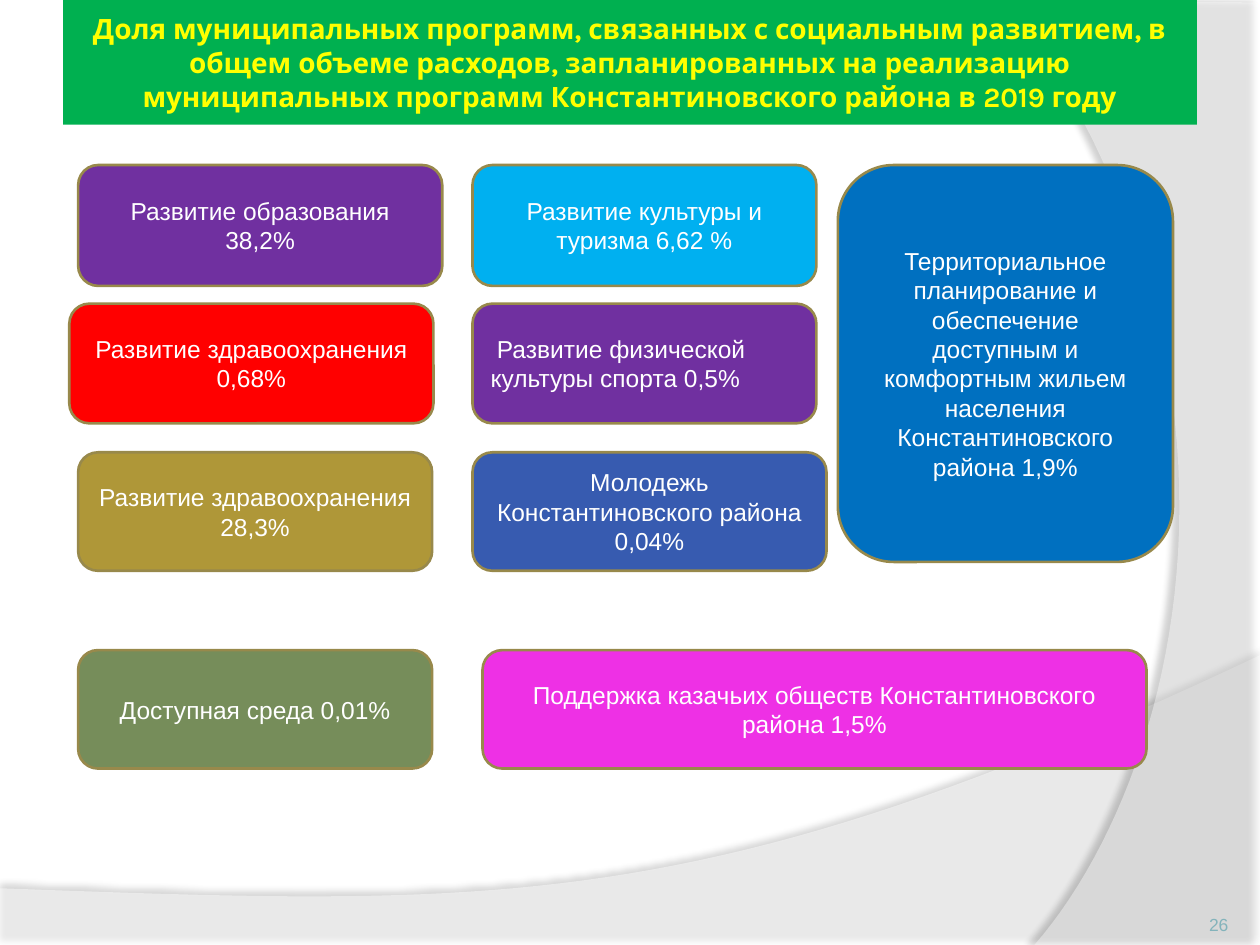
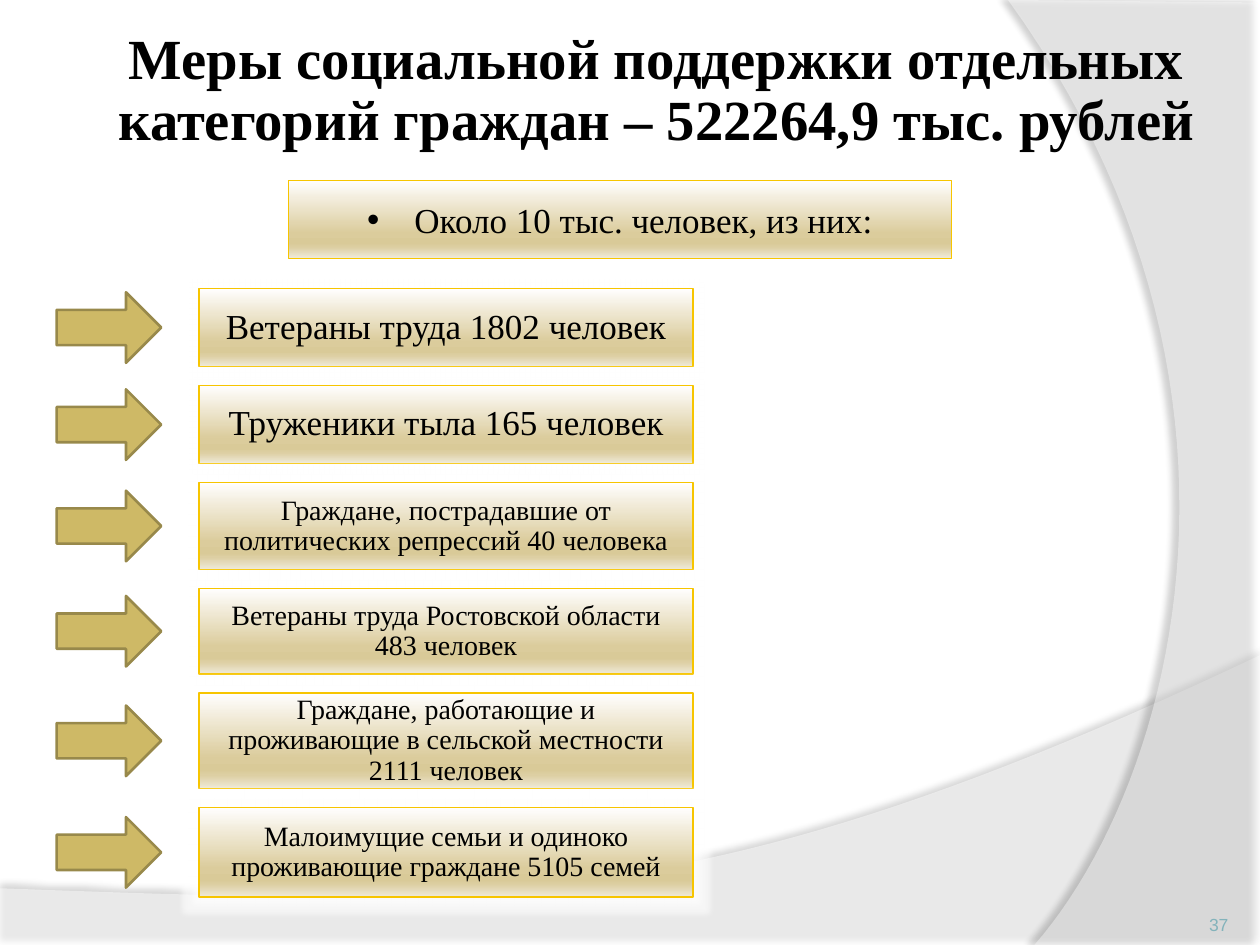
from dataclasses import dataclass

from lxml import etree
from pptx import Presentation
from pptx.dml.color import RGBColor
from pptx.enum.shapes import MSO_SHAPE
from pptx.enum.text import MSO_ANCHOR, MSO_AUTO_SIZE, PP_ALIGN
from pptx.oxml.ns import qn
from pptx.util import Emu, Inches, Pt

ROUNDED = MSO_SHAPE.ROUNDED_RECTANGLE
RECTANGLE = MSO_SHAPE.RECTANGLE
ARROW = MSO_SHAPE.RIGHT_ARROW
MIDDLE, BOTTOM = MSO_ANCHOR.MIDDLE, MSO_ANCHOR.BOTTOM
LEFT, CENTER, RIGHT = PP_ALIGN.LEFT, PP_ALIGN.CENTER, PP_ALIGN.RIGHT
NO_FIT = MSO_AUTO_SIZE.NONE
TITLE_AND_BODY, TITLE_ONLY = 1, 5

COLORS = {
    "white": "FFFFFF",
    "black": "000000",
    "yellow": "FFFF00",
    "title_band": "00B050",
    "outline": "98894B",
    "gold": "CEB966",
    "gold_line": "F7C500",
    "page": "83B3BB",
    "purple": "7030A0",
    "red": "FF0000",
    "ochre": "AF9738",
    "sky": "00B0F0",
    "blue": "0070C0",
    "indigo": "375BB0",
    "magenta": "EE30E5",
    "olive": "768D5A",
}
GOLD_GRADIENT = {0: "FFFEFE", 68: "DBCC9C", 81: "D9CA98", 86: "DDCFA3", 100: "EFEAD9"}
SERIF = "Times New Roman"


@dataclass(frozen=True)
class Ribbon:
    outline: tuple
    curve: tuple
    opacity: int
    shadow_opacity: int
    shadow_distance: float
    shadow_angle: int


@dataclass(frozen=True)
class Program:
    text: str
    color: str
    left: float
    top: float
    width: float
    height: float
    align: PP_ALIGN = CENTER


@dataclass(frozen=True)
class Group:
    text: str
    height: float
    size: int


RIBBONS = (
    Ribbon(((0, 7.05), (0, 7.51), (10, 7.51), (10, 5.2)),
           ((10, 5.2), (5.59, 7.29), (3.91, 7.19), (0, 7.05)), 45, 35, 3.5, 270),
    Ribbon(((10, 0.02), (10, 7.5), (8.21, 7.5)),
           ((8.21, 7.5), (9.35, 6.19), (10.18, 3), (8, 0)), 40, 45, 4, 180),
)

PROGRAMS = (
    Program("Развитие образования 38,2%", "purple", 0.62, 1.31, 2.89, 0.96),
    Program("Развитие здравоохранения 0,68%", "red", 0.55, 2.41, 2.89, 0.95),
    Program("Развитие здравоохранения 28,3%", "ochre", 0.62, 3.59, 2.81, 0.94),
    Program("Развитие культуры и туризма 6,62 %", "sky", 3.75, 1.31, 2.73, 0.96),
    Program("Территориальное планирование и обеспечение доступным и комфортным "
            "жильем населения Константиновского района 1,9%",
            "blue", 6.65, 1.31, 2.66, 3.15),
    Program("Развитие физической культуры спорта 0,5%",
            "purple", 3.75, 2.41, 2.73, 0.95, LEFT),
    Program("Молодежь Константиновского района 0,04%", "indigo", 3.75, 3.59, 2.81, 0.94),
    Program("Поддержка казачьих обществ Константиновского района 1,5%",
            "magenta", 3.83, 5.16, 5.27, 0.94),
    Program("Доступная среда 0,01%", "olive", 0.62, 5.16, 2.81, 0.94),
)

GROUPS = (
    Group("Ветераны труда 1802 человек", 0.62, 20),
    Group("Труженики тыла 165 человек", 0.62, 20),
    Group("Граждане, пострадавшие от политических репрессий 40 человека", 0.69, 16),
    Group("Ветераны труда Ростовской области 483 человек", 0.68, 16),
    Group("Граждане, работающие и проживающие в сельской местности 2111 человек", 0.76, 16),
    Group("Малоимущие семьи и одиноко проживающие граждане 5105 семей", 0.71, 16),
)
GROUPS_TOP, GROUPS_GAP = 2.29, 0.15
ARROW_WIDTH, ARROW_HEIGHT = 0.83, 0.56


def rgb(name: str) -> RGBColor:
    return RGBColor.from_string(COLORS[name])


def place(shape, left: float, top: float, width: float, height: float) -> None:
    shape.left, shape.top = Inches(left), Inches(top)
    shape.width, shape.height = Inches(width), Inches(height)


def paint(shape, fill: str, line: str = "outline", width: float = 1.5) -> None:
    shape.shadow.inherit = False
    shape.fill.solid()
    shape.fill.fore_color.rgb = rgb(fill)
    shape.line.color.rgb = rgb(line)
    shape.line.width = Pt(width)


def write(shape, text: str, font: str, size: float, color: str, align=CENTER,
          anchor=MIDDLE, bold: bool = False, spacing: float = 1.0):
    frame = shape.text_frame
    frame.text = text
    frame.word_wrap = True
    frame.auto_size = NO_FIT
    frame.vertical_anchor = anchor
    paragraph = frame.paragraphs[0]
    paragraph.alignment = align
    paragraph.line_spacing = spacing
    paragraph.space_before = Pt(0)
    paragraph.font.name = font
    paragraph.font.size = Pt(size)
    paragraph.font.bold = bold
    paragraph.font.color.rgb = rgb(color)
    return paragraph


def set_insets(shape, inset: float) -> None:
    frame = shape.text_frame
    frame.margin_left = frame.margin_right = Inches(inset)
    frame.margin_top = frame.margin_bottom = Inches(inset)


def add_effect(shape, tag: str, color: str, opacity: int, **settings) -> None:
    shape.shadow.inherit = False
    effects = shape.element.spPr.find(qn("a:effectLst"))
    effect = etree.SubElement(effects, qn(tag), {k: str(v) for k, v in settings.items()})
    tint = etree.SubElement(effect, qn("a:srgbClr"), val=COLORS[color])
    etree.SubElement(tint, qn("a:alpha"), val=str(opacity * 1000))


def paint_gold(shape) -> None:
    shape.fill.gradient()
    shape.fill.gradient_angle = 270
    stops = shape.element.spPr.find(".//" + qn("a:gsLst"))
    for stop in list(stops):
        stops.remove(stop)
    for position, color in GOLD_GRADIENT.items():
        stop = etree.SubElement(stops, qn("a:gs"), pos=str(position * 1000))
        etree.SubElement(stop, qn("a:srgbClr"), val=color)
    shape.line.color.rgb = rgb("gold_line")
    shape.line.width = Pt(0.75)
    add_effect(shape, "a:glow", "white", 60, rad=Pt(6))


def curve_points(curve: tuple, steps: int = 48) -> list:
    points = []
    for step in range(1, steps + 1):
        t = step / steps
        weights = ((1 - t) ** 3, 3 * t * (1 - t) ** 2, 3 * t ** 2 * (1 - t), t ** 3)
        points.append(tuple(sum(w * p[axis] for w, p in zip(weights, curve))
                            for axis in (0, 1)))
    return points


def add_ribbon(slide, master, ribbon: Ribbon, layer: int) -> None:
    points = [(Inches(x), Inches(y))
              for x, y in (*ribbon.outline, *curve_points(ribbon.curve))]
    builder = slide.shapes.build_freeform(*points[0], scale=1.0)
    builder.add_line_segments(points[1:], close=True)
    band = builder.convert_to_shape()
    paint(band, "white")
    band.line.fill.background()
    tint = band.element.spPr.find(qn("a:solidFill")).find(qn("a:srgbClr"))
    etree.SubElement(tint, qn("a:alpha"), val=str(ribbon.opacity * 1000))
    add_effect(band, "a:outerShdw", "black", ribbon.shadow_opacity, blurRad=Pt(4),
               dist=Pt(ribbon.shadow_distance), dir=ribbon.shadow_angle * 60000,
               algn="ctr", rotWithShape=0)
    master.shapes.element.insert(2 + layer, band.element)


def add_page_number(slide, number: int) -> None:
    page = slide.shapes.add_textbox(Inches(8.92), Inches(7.02), Inches(0.83), Inches(0.4))
    write(page, str(number), "Arial", 10, "page", RIGHT, BOTTOM)
    set_insets(page, 0)


def add_program(slide, program: Program) -> None:
    card = slide.shapes.add_shape(ROUNDED, 0, 0, 0, 0)
    place(card, program.left, program.top, program.width, program.height)
    paint(card, program.color)
    paragraph = write(card, program.text, "Arial", 14, "white", program.align)
    if program.align == LEFT:
        paragraph._p.get_or_add_pPr().set("indent", str(Inches(0.05)))


def add_group(slide, group: Group, top: float) -> None:
    box = slide.shapes.add_shape(RECTANGLE, 0, 0, 0, 0)
    place(box, 1.58, top, 3.92, group.height)
    paint_gold(box)
    write(box, group.text, SERIF, group.size, "black", spacing=0.9)
    pointer = slide.shapes.add_shape(ARROW, 0, 0, 0, 0)
    place(pointer, 0.45, top + (group.height - ARROW_HEIGHT) / 2, ARROW_WIDTH, ARROW_HEIGHT)
    paint(pointer, "gold")


def build_programs_slide(prs):
    slide = prs.slides.add_slide(prs.slide_layouts[TITLE_ONLY])
    title = slide.shapes.title
    place(title, 0.5, 0, 9, 0.99)
    paint(title, "title_band")
    title.line.fill.background()
    write(title, "Доля муниципальных программ, связанных с социальным развитием, в общем "
          "объеме расходов, запланированных на реализацию муниципальных программ "
          "Константиновского района в 2019 году", "Karla", 16, "yellow", bold=True)
    set_insets(title, 0.05)
    for program in PROGRAMS:
        add_program(slide, program)
    add_page_number(slide, 26)
    return slide


def build_support_slide(prs) -> None:
    slide = prs.slides.add_slide(prs.slide_layouts[TITLE_AND_BODY])
    title = slide.shapes.title
    place(title, 0.69, 0.13, 9.04, 1.19)
    write(title, "Меры социальной поддержки отдельных категорий граждан – "
          "522264,9 тыс. рублей", SERIF, 32.4, "black", bold=True, spacing=0.9)
    total = slide.placeholders[1]
    place(total, 2.29, 1.43, 5.26, 0.62)
    paint_gold(total)
    total.text_frame.text = ""
    properties = total.text_frame.paragraphs[0]._p.get_or_add_pPr()
    properties.set("marL", "0")
    properties.set("indent", "0")
    etree.SubElement(properties, qn("a:buNone"))
    write(total, "Около 10 тыс. человек, из них:", SERIF, 20, "black")
    top = GROUPS_TOP
    for group in GROUPS:
        add_group(slide, group, top)
        top += group.height + GROUPS_GAP
    add_page_number(slide, 37)


def main() -> None:
    prs = Presentation()
    prs.slide_width, prs.slide_height = Emu(Inches(10)), Emu(Inches(7.5))
    programs_slide = build_programs_slide(prs)
    for layer, ribbon in enumerate(RIBBONS):
        add_ribbon(programs_slide, prs.slide_master, ribbon, layer)
    build_support_slide(prs)
    prs.save("out.pptx")


if __name__ == "__main__":
    main()
